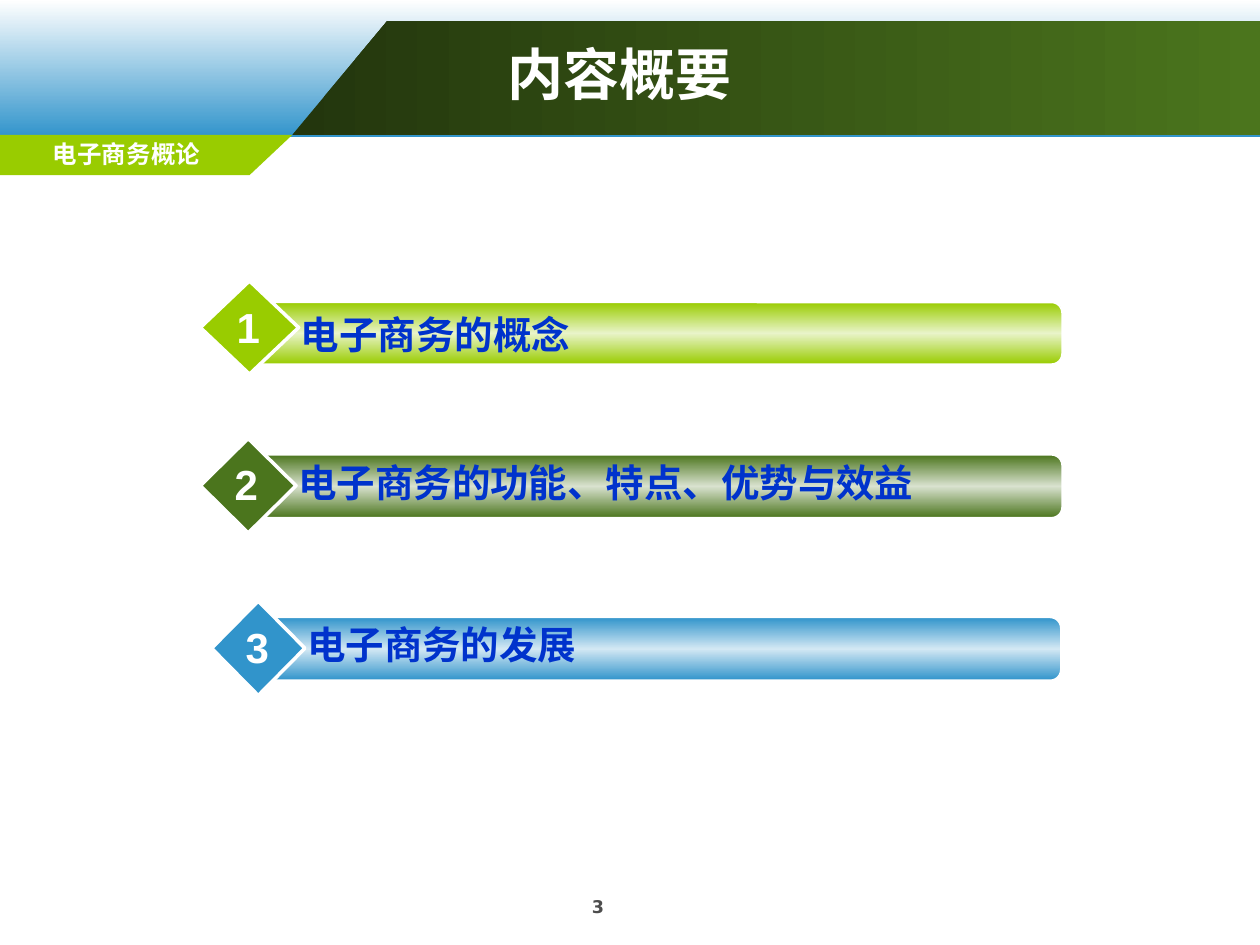
from copy import deepcopy
from pptx import Presentation
from pptx import util as u
from pptx.dml import color
from pptx.enum import shapes, text

presentation = Presentation()
presentation.slide_width = u.Inches(10)
presentation.slide_height = u.Inches(7.5)
slide = presentation.slides.add_slide(presentation.slide_layouts[6])
rgb = color.RGBColor.from_string


def paint(shape, colors, angle=0, line_width=0):
    shape.shadow.inherit = False
    if len(colors) == 1:
        shape.fill.solid()
        shape.fill.fore_color.rgb = rgb(colors[0])
    else:
        shape.fill.gradient()
        shape.fill.gradient_angle = angle
        stop_list = shape.fill._xPr.gradFill.gsLst
        while len(stop_list) < len(colors):
            stop_list.append(deepcopy(stop_list[0]))
        for i, stop in enumerate(shape.fill.gradient_stops):
            stop.position = i / (len(colors) - 1)
            stop.color.rgb = rgb(colors[i])
    if line_width:
        shape.line.color.rgb = rgb("FFFFFF")
        shape.line.width = u.Pt(line_width)
    else:
        shape.line.fill.background()


def add_text(wording, box, size, hex_color, font="Arial", centered=True):
    shape = slide.shapes.add_textbox(*map(u.Inches, box))
    shape.text_frame.word_wrap = True
    paragraph = shape.text_frame.paragraphs[0]
    paragraph.alignment = text.PP_ALIGN.CENTER if centered else text.PP_ALIGN.LEFT
    run = paragraph.add_run()
    run.text = wording
    run.font.name = font
    run.font.size = u.Pt(size)
    run.font.bold = True
    run.font.color.rgb = rgb(hex_color)
    return shape


sky = slide.shapes.add_shape(
    shapes.MSO_SHAPE.RECTANGLE, 0, 0, u.Inches(10), u.Inches(1.09))
paint(sky, ["FFFFFF", "3194CB"], 270)

bands = [
    ([(2.32, 1.07), (10.01, 1.07), (10.01, 0.17), (3.07, 0.17)], ["23360D", "4B751D"]),
    ([(0, 1.07), (2.32, 1.07), (1.98, 1.39), (0, 1.39)], ["99CC00"]),
]
for corners, colors in bands:
    points = [(u.Inches(x), u.Inches(y)) for x, y in corners]
    builder = slide.shapes.build_freeform(*points[0])
    builder.add_line_segments(points[1:], close=True)
    paint(builder.convert_to_shape(), colors)

add_text("电子商务概论", (0.04, 1.05, 1.93, 0.31), 14, "FFFFFF", "DejaVu Sans")
add_text("3", (3.58, 7.06, 2.33, 0.33), 10, "4D4D4D", "DejaVu Sans")
title = add_text("内容概要", (2.83, 0.25, 6.89, 0.66), 32, "FFFFFF", centered=False)
title.text_frame.vertical_anchor = text.MSO_ANCHOR.MIDDLE
title_properties = title.text_frame.paragraphs[0]._p.get_or_add_pPr()
title_properties.set("marL", str(u.Inches(1.1)))
title_properties.set("indent", "0")

topics = [
    ("电子商务的概念", "99CC00", "E9F4C9", (1.93, 2.4, 6.5, 0.49),
     (1.59, 2.23, 0.78, 0.74), (2.29, 2.42, 4.59, 0.47), (1.77, 2.34, 0.4, 0.5)),
    ("电子商务的功能、特点、优势与效益", "4B751D", "D9E2CF", (2.02, 3.61, 6.41, 0.5),
     (1.59, 3.48, 0.76, 0.75), (2.27, 3.59, 5.74, 0.47), (1.76, 3.59, 0.39, 0.5)),
    ("电子商务的发展", "3194CB", "D3E8F4", (2.09, 4.9, 6.33, 0.5),
     (1.68, 4.77, 0.74, 0.75), (2.34, 4.88, 6.16, 0.47), (1.85, 4.88, 0.38, 0.5)),
]
for number, topic in enumerate(topics, 1):
    wording, dark, light, bar_box, diamond_box, label_box, number_box = topic
    bar = slide.shapes.add_shape(
        shapes.MSO_SHAPE.ROUNDED_RECTANGLE, *map(u.Inches, bar_box))
    bar.adjustments[0] = 0.17
    paint(bar, [dark, light, dark], 270, 1)
    diamond = slide.shapes.add_shape(
        shapes.MSO_SHAPE.DIAMOND, *map(u.Inches, diamond_box))
    paint(diamond, [dark], line_width=2)
    add_text(wording, label_box, 22, "0033CC", centered=False)
    add_text(str(number), number_box, 24, "FFFFFF")

presentation.save("out.pptx")
